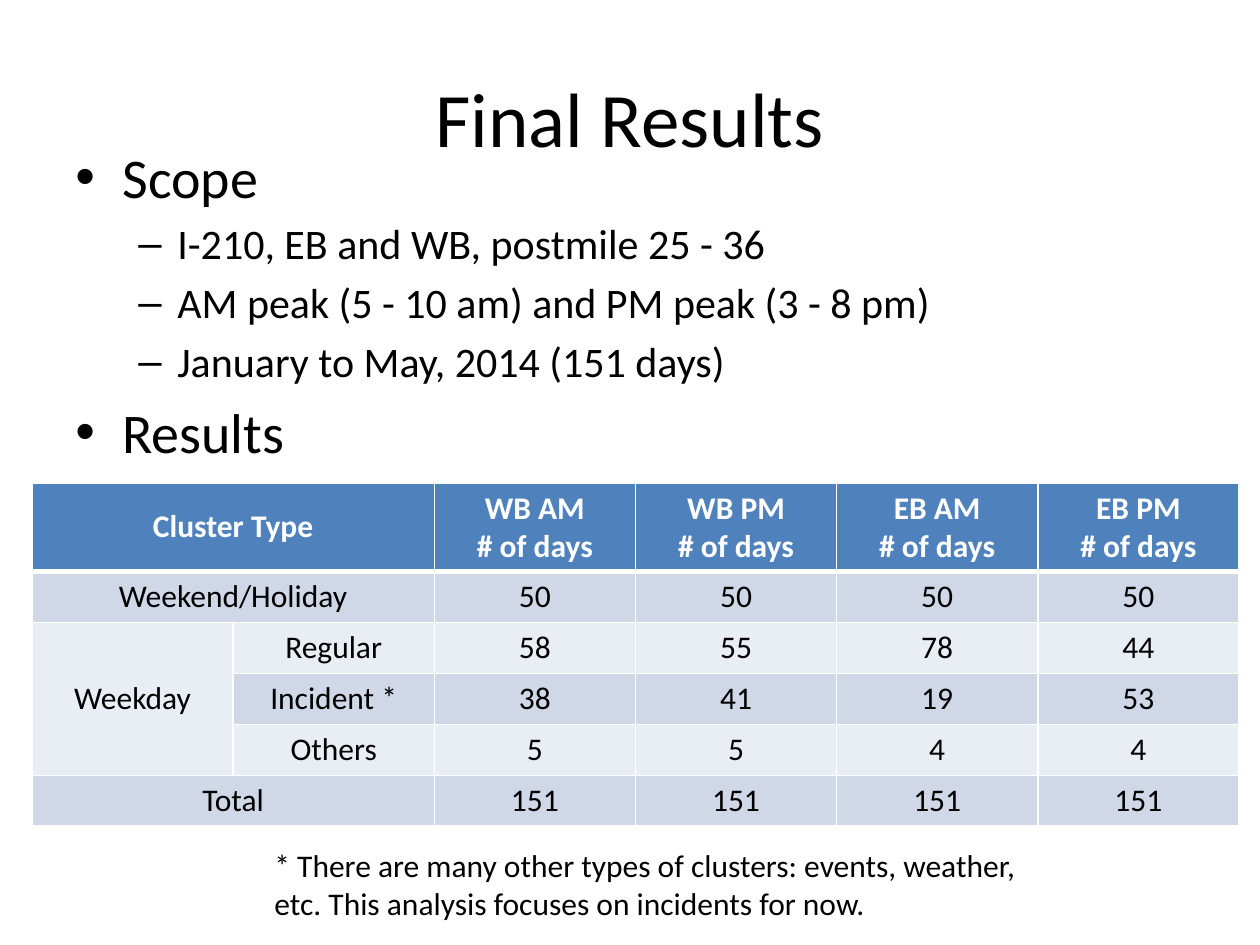
from lxml.etree import SubElement
from pptx import Presentation
from pptx.dml.color import RGBColor
from pptx.enum.text import MSO_ANCHOR, MSO_AUTO_SIZE, PP_ALIGN
from pptx.oxml.ns import qn
from pptx.util import Emu, Pt

SCALE = 914400 / 126
LEVELS = [("•", 47, 47, 32), ("–", 102, 39, 24)]
SCOPE = [
    (0, "Scope"),
    (1, "I-210, EB and WB, postmile 25 - 36"),
    (1, "AM peak (5 - 10 am) and PM peak (3 - 8 pm)"),
    (1, "January to May, 2014 (151 days)"),
    (0, "Results"),
]
HEAD = ["Cluster Type", ""] + [f"{name}\n# of days" for name in ("WB AM", "WB PM", "EB AM", "EB PM")]
ROWS = [
    HEAD,
    ["Weekend/Holiday", "", 50, 50, 50, 50],
    ["Weekday", "Regular", 58, 55, 78, 44],
    ["", "Incident *", 38, 41, 19, 53],
    ["", "Others", 5, 5, 4, 4],
    ["Total", "", 151, 151, 151, 151],
]
SPANS = [(0, 0, 0, 1), (1, 0, 1, 1), (2, 0, 4, 0), (5, 0, 5, 1)]
NOTE = ("* There are many other types of clusters: events, weather, etc. "
        "This analysis focuses on incidents for now.")


def px(size):
    """Turn pixels into EMU."""
    return Emu(round(size * SCALE))


def paint(code):
    """Turn a hex string into a colour."""
    return RGBColor.from_string(code)


def write(para, text, size=18, color="000000", bold=False, align=PP_ALIGN.LEFT):
    """Put formatted text into a paragraph."""
    para.alignment = align
    run = para.add_run()
    run.text = text
    font = run.font
    font.name, font.size, font.bold = "Calibri", Pt(size), bold
    font.color.rgb = paint(color)


def frame(slide, box, anchor=MSO_ANCHOR.TOP):
    """Add a wrapping text box and return its text frame."""
    body = slide.shapes.add_textbox(*map(px, box)).text_frame
    body.word_wrap = True
    body.vertical_anchor = anchor
    return body


def bullet(para, mark, left, hang):
    """Give a paragraph a hanging bullet and relative space before."""
    props = para._p.get_or_add_pPr()
    props.set("marL", str(px(left)))
    props.set("indent", str(-px(hang)))
    space = SubElement(props, qn("a:spcBef"))
    SubElement(space, qn("a:spcPct"), val="20000")
    SubElement(props, qn("a:buFont"), typeface="Arial")
    SubElement(props, qn("a:buChar"), char=mark)


def title(slide, box):
    """Place the slide title."""
    body = frame(slide, box, MSO_ANCHOR.MIDDLE)
    write(body.paragraphs[0], "Final Results", size=44, align=PP_ALIGN.CENTER)


def outline(slide, box):
    """Place the two-level bullet list."""
    body = frame(slide, box)
    for i, (level, text) in enumerate(SCOPE):
        para = body.add_paragraph() if i else body.paragraphs[0]
        mark, left, hang, size = LEVELS[level]
        para.level = level
        write(para, text, size=size)
        bullet(para, mark, left, hang)


def edge(cell, base):
    """Draw white cell borders, with the bottom one of given width."""
    props = cell._tc.get_or_add_tcPr()
    for i, (side, width) in enumerate((("L", 1), ("R", 1), ("T", 1), ("B", base))):
        line = props.makeelement(qn(f"a:ln{side}"), {"w": str(Pt(width))})
        fill = SubElement(line, qn("a:solidFill"))
        SubElement(fill, qn("a:srgbClr"), val="FFFFFF")
        props.insert(i, line)


def grid(slide, box, head):
    """Place the results table with a taller header row."""
    left, top, width, height = box
    count, wide = len(ROWS), len(HEAD)
    table = slide.shapes.add_table(count, wide, *map(px, box)).table
    for col in table.columns:
        col.width = px(width / wide)
    for r, row in enumerate(ROWS):
        table.rows[r].height = px((height - head) / (count - 1) if r else head)
        for c, value in enumerate(row):
            cell = table.cell(r, c)
            cell.vertical_anchor = MSO_ANCHOR.MIDDLE
            cell.fill.solid()
            fill = ("E9EDF4", "D0D8E8")[r % 2] if r else "4F81BD"
            if r == count - 1:
                fill = "D0D8E8"
            cell.fill.fore_color.rgb = paint(fill)
            edge(cell, 1 if r else 3)
            body = cell.text_frame
            for i, text in enumerate(str(value).split("\n")):
                para = body.add_paragraph() if i else body.paragraphs[0]
                if text:
                    write(para, text, color="000000" if r else "FFFFFF",
                          bold=not r, align=PP_ALIGN.CENTER)
    for r, c, end, last in SPANS:
        table.cell(r, c).merge(table.cell(end, last))


def note(slide, box):
    """Place the footnote."""
    body = frame(slide, box)
    body.auto_size = MSO_AUTO_SIZE.SHAPE_TO_FIT_TEXT
    write(body.paragraphs[0], NOTE)


def main():
    """Build and save the slide."""
    deck = Presentation()
    deck.slide_width, deck.slide_height = px(1260), px(945)
    slide = deck.slides.add_slide(deck.slide_layouts[6])
    title(slide, (63, 38, 1134, 158))
    outline(slide, (63, 136, 1134, 624))
    note(slide, (262, 840, 777, 89))
    grid(slide, (32, 483, 1207, 343), 88)
    deck.save("out.pptx")


if __name__ == "__main__":
    main()
